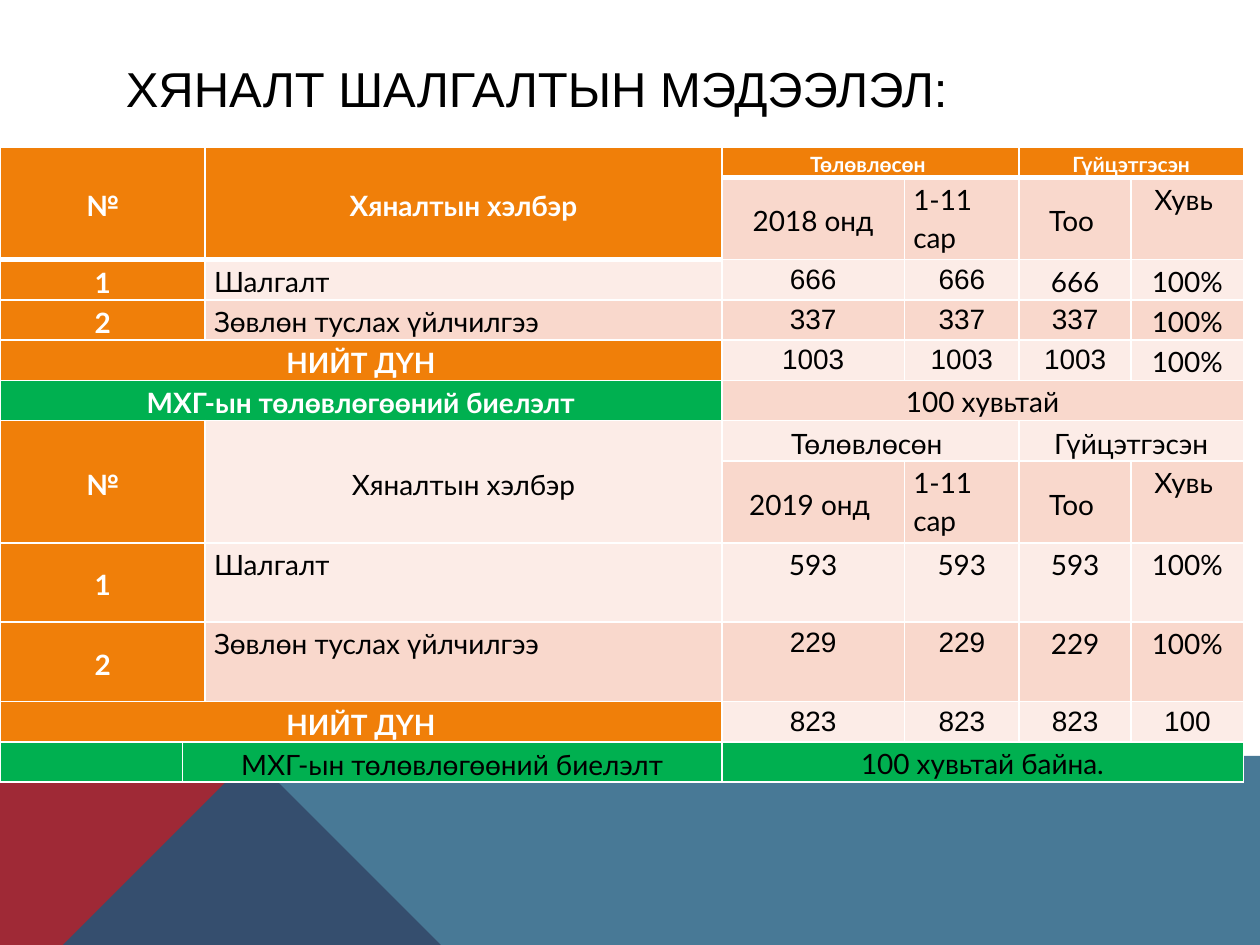
from lxml.etree import SubElement
from pptx import Presentation
from pptx.dml.color import RGBColor as RGB
from pptx.enum.text import MSO_ANCHOR as ANC, PP_ALIGN as AL
from pptx.oxml.ns import qn
from pptx.util import Inches, Pt

HUES = {"red": "9F2936", "blue": "1B587C", "orange": "F07F09", "green": "00B050",
        "pale": "FCECE7", "pink": "F9D8CC", "white": "FFFFFF", "black": "000000"}


def paint(fill, hue):
    fill.solid()
    fill.fore_color.rgb = RGB.from_string(HUES[hue])


def style(item, vals):
    for name, val in vals.items():
        setattr(item, name, val)


prs = Presentation()
style(prs, {"slide_width": Inches(10), "slide_height": Inches(7.5)})
slide = prs.slides.add_slide(prs.slide_layouts[6])

# Base bands: red triangle, then a see-through blue field
bands = [
    ("red", 100, [(0, 7.5), (0, 5.52), (2.23, 5.52), (3.91, 7.5)]),
    ("blue", 80, [(0, 7.5), (2.23, 5.52), (10, 5.52), (10, 7.5)]),
]
for hue, alpha, pts in bands:
    form = slide.shapes.build_freeform(*pts[0], scale=Inches(1))
    form.add_line_segments(pts[1:], close=True)
    band = form.convert_to_shape()
    band.shadow.inherit = False
    band.line.fill.background()
    paint(band.fill, hue)
    if alpha < 100:
        tint = band._element.spPr.find(".//" + qn("a:srgbClr"))
        SubElement(tint, qn("a:alpha"), val=str(alpha * 1000))

# Title
box = slide.shapes.add_textbox(Inches(0.9), Inches(0.4), Inches(8.22), Inches(0.6))
style(box.text_frame, {"word_wrap": True, "vertical_anchor": ANC.MIDDLE})
run = box.text_frame.paragraphs[0].add_run()
run.text = "ХЯНАЛТ ШАЛГАЛТЫН МЭДЭЭЛЭЛ:"
style(run.font, {"name": "Arial", "size": Pt(28)})
run.font.color.rgb = RGB.from_string(HUES["black"])

# Table grid
cols = [1.45, 0.14, 4.1, 1.45, 0.91, 0.89, 0.89]
rows = [0.24, 0.65] + [0.32] * 5 + [0.65, 0.63, 0.63, 0.32, 0.32]
frame = slide.shapes.add_table(len(rows), len(cols), Inches(0), Inches(1.17),
                               Inches(sum(cols)), Inches(sum(rows)))
table = frame.table
style(table, {"first_row": False, "horz_banding": False})
for col, size in zip(table.columns, cols):
    col.width = Inches(size)
for row, size in zip(table.rows, rows):
    row.height = Inches(size)


# Cell looks; a fill of None takes the band colour of the row
base = {"fill": None, "ink": "black", "bold": False, "face": "Lato",
        "size": 16, "align": AL.CENTER, "anchor": ANC.TOP}
top = base
mid = base | {"anchor": ANC.MIDDLE}
left = base | {"align": AL.LEFT}
arial = base | {"face": "Arial"}
head = mid | {"fill": "orange", "ink": "white", "bold": True}
small = head | {"size": 12}
goal = head | {"fill": "green"}
done = mid | {"fill": "green"}

# Each cell: row, column, text, look, rows and columns spanned
cells = [
    (0, 0, "№", head, 2, 2), (0, 2, "Хяналтын хэлбэр", head, 2, 1),
    (0, 3, "Төлөвлөсөн ", small, 1, 2), (0, 5, "Гүйцэтгэсэн", small, 1, 2),
    (5, 0, "МХГ-ын төлөвлөгөөний биелэлт", goal, 1, 3),
    (5, 3, "100 хувьтай", top, 1, 4),
    (6, 0, "№", head, 2, 2), (6, 2, "Хяналтын хэлбэр", mid, 2, 1),
    (6, 3, "Төлөвлөсөн ", mid, 1, 2), (6, 5, "Гүйцэтгэсэн", mid, 1, 2),
    (11, 0, "", done, 1, 1),
    (11, 1, "МХГ-ын төлөвлөгөөний биелэлт", done, 1, 2),
    (11, 3, "100 хувьтай байна.", done | {"anchor": ANC.TOP}, 1, 4),
]
for r, year in [(1, "2018 онд"), (7, "2019 онд ")]:
    cells += [(r, 3, year, mid, 1, 1), (r, 4, "1-11 сар", left, 1, 1),
              (r, 5, "Тоо ", mid, 1, 1), (r, 6, "Хувь ", top, 1, 1)]

# Data rows: row, number, label, count, share, looks of the last four cells
data = [
    (2, "1", "Шалгалт", "666", "100%", [arial, arial, top, top]),
    (3, "2", "Зөвлөн туслах үйлчилгээ", "337", "100%", [arial, arial, arial, top]),
    (4, "", "НИЙТ ДҮН", "1003", "100%", [arial, arial, arial, top]),
    (8, "1", "Шалгалт", "593", "100%", [top] * 4),
    (9, "2", "Зөвлөн туслах үйлчилгээ", "229", "100%", [arial, arial, top, top]),
    (10, "", "НИЙТ ДҮН", "823", "100", [arial] * 4),
]
for r, num, label, count, share, looks in data:
    if num:
        cells += [(r, 0, num, head, 1, 2), (r, 2, label, left, 1, 1)]
    else:
        cells.append((r, 0, label, head, 1, 3))
    for c, (text, look) in enumerate(zip([count] * 3 + [share], looks), 3):
        cells.append((r, c, text, look, 1, 1))

# Margins and white borders, thick below the first header
pads = {"margin_left": Inches(0.07), "margin_right": Inches(0.07),
        "margin_top": 0, "margin_bottom": 0}
thick = {(0, c) for c in range(len(cols))} | {(1, c) for c in range(3)}
for r in range(len(rows)):
    for c in range(len(cols)):
        cell = table.cell(r, c)
        style(cell, pads)
        end = SubElement(cell.text_frame.paragraphs[0]._p, qn("a:endParaRPr"))
        end.set("sz", "1200")
        edges = {"a:lnL": False, "a:lnR": False,
                 "a:lnT": (r - 1, c) in thick, "a:lnB": (r, c) in thick}
        for tag, wide in edges.items():
            edge = SubElement(cell._tc.get_or_add_tcPr(), qn(tag),
                              w=str(Pt(3 if wide else 1)))
            fill = SubElement(edge, qn("a:solidFill"))
            SubElement(fill, qn("a:srgbClr"), val=HUES["white"])

# Cell contents
for r, c, text, look, high, wide in cells:
    cell = table.cell(r, c)
    if high * wide > 1:
        cell.merge(table.cell(r + high - 1, c + wide - 1))
    cell.vertical_anchor = look["anchor"]
    paint(cell.fill, look["fill"] or ("pink" if r % 2 else "pale"))
    para = cell.text_frame.paragraphs[0]
    style(para, {"alignment": look["align"], "line_spacing": 1.15})
    if text:
        run = para.add_run()
        run.text = text
        style(run.font, {"name": look["face"], "size": Pt(look["size"]),
                         "bold": look["bold"]})
        run.font.color.rgb = RGB.from_string(HUES[look["ink"]])

prs.save("out.pptx")
